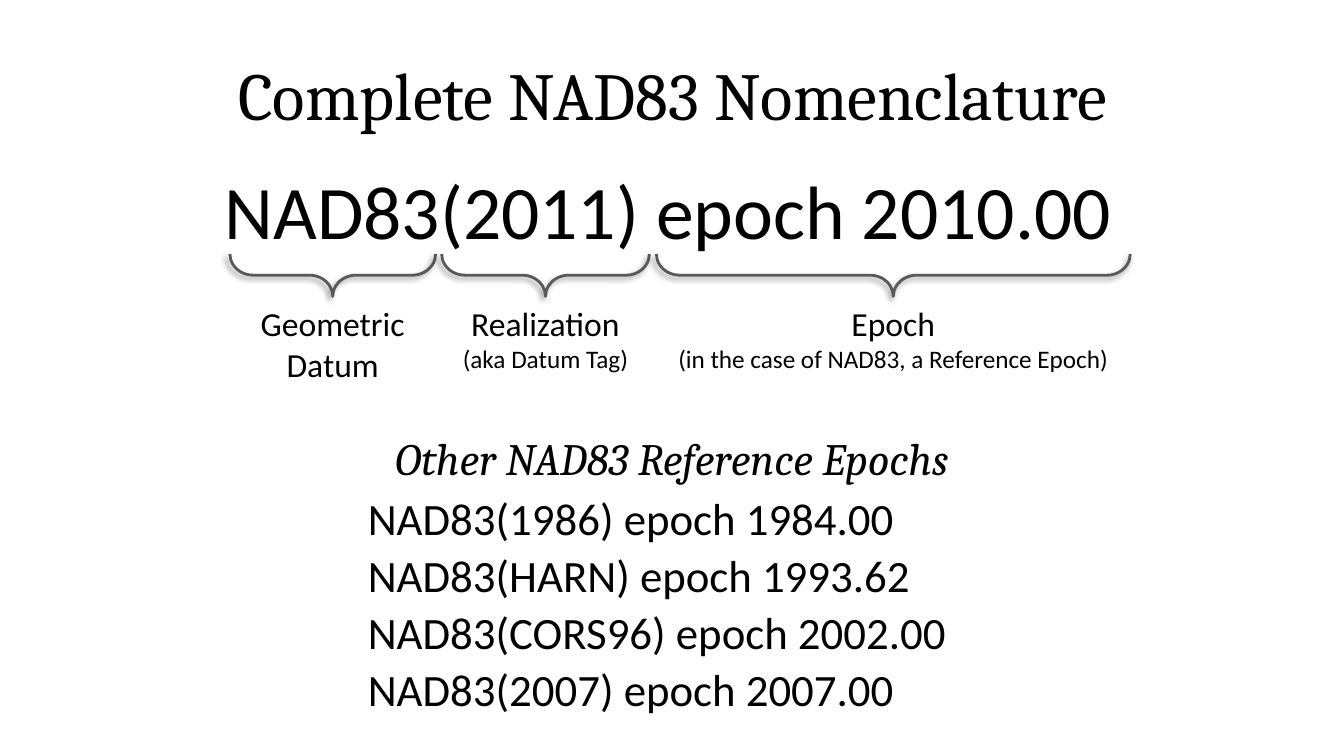
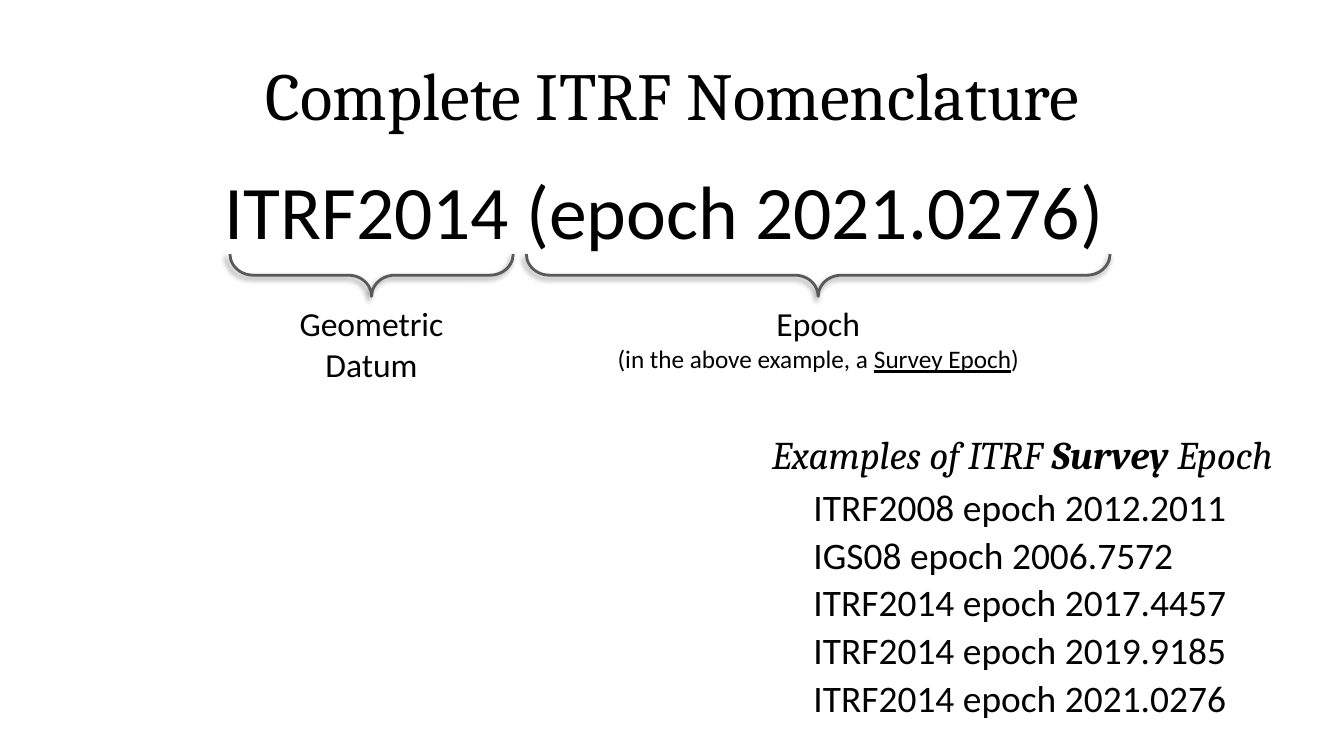
from lxml import etree
from pptx import Presentation
from pptx.dml.color import RGBColor
from pptx.enum.shapes import MSO_SHAPE
from pptx.enum.text import MSO_ANCHOR, PP_ALIGN
from pptx.oxml.ns import qn
from pptx.util import Inches, Pt

BLACK = RGBColor(0x00, 0x00, 0x00)
GRAY = RGBColor(0x59, 0x59, 0x59)
BODY_FONT = "Calibri"
HEADING_FONT = "Cambria"
LEFT = PP_ALIGN.LEFT
CENTER = PP_ALIGN.CENTER
TOP = MSO_ANCHOR.TOP
MIDDLE = MSO_ANCHOR.MIDDLE
RIGHT_BRACE = MSO_SHAPE.RIGHT_BRACE
BRACE_TOP = 2.52
BRACE_DEPTH = 0.42
LABEL_TOP = 2.96


class NomenclatureDeck:
    """Holds the shared style and the slide being built."""

    def __init__(self):
        self.presentation = Presentation()
        self.presentation.slide_width = Inches(13.33)
        self.presentation.slide_height = Inches(7.5)
        self.slide = None

    def add_slide(self, title, example):
        self.slide = self.presentation.slides.add_slide(self.presentation.slide_layouts[6])
        self.text((0.67, 0.3, 12, 1.25), [title], [48], HEADING_FONT, CENTER, MIDDLE)
        self.text((2.13, 1.58, 10, 1.01), [example], [54])

    def text(self, box, lines, sizes, font=BODY_FONT, align=LEFT, anchor=TOP, after=0):
        frame = self.slide.shapes.add_textbox(*map(Inches, box)).text_frame
        frame.word_wrap = True
        frame.vertical_anchor = anchor
        paragraphs = []
        for index, (line, size) in enumerate(zip(lines, sizes)):
            paragraph = frame.add_paragraph() if index else frame.paragraphs[0]
            for part in [line] if isinstance(line, str) else line:
                paragraph.add_run().text = part
            paragraph.alignment = align
            paragraph.space_after = Pt(after)
            paragraph.font.name = font
            paragraph.font.size = Pt(size)
            paragraph.font.color.rgb = BLACK
            paragraphs.append(paragraph)
        return paragraphs

    def brace(self, left, width):
        middle_x = left + width / 2
        middle_y = BRACE_TOP + BRACE_DEPTH / 2
        shape = self.slide.shapes.add_shape(
            RIGHT_BRACE,
            Inches(middle_x - BRACE_DEPTH / 2), Inches(middle_y - width / 2),
            Inches(BRACE_DEPTH), Inches(width))
        shape.rotation = 90
        shape.adjustments[0] = 0.55
        shape.fill.background()
        shape.line.color.rgb = GRAY
        shape.line.width = Pt(2)
        shape.shadow.inherit = False
        effects = shape._element.spPr.find(qn("a:effectLst"))
        shadow = etree.SubElement(
            effects, qn("a:outerShdw"), blurRad=str(Pt(4)), dist=str(Pt(3)),
            dir="8100000", algn="tr", rotWithShape="0")
        color = etree.SubElement(shadow, qn("a:srgbClr"), val=str(BLACK))
        etree.SubElement(color, qn("a:alpha"), val="40000")

    def labelled_brace(self, left, width, lines, note_size=18):
        self.brace(left, width)
        return self.text((left, LABEL_TOP, width, 0.9), lines, [24, note_size], align=CENTER)

    def heading(self, left, width, line, size):
        paragraph = self.text((left, 4.22, width, 0.6), [line], [size], HEADING_FONT, CENTER)[0]
        paragraph.font.italic = True
        return paragraph

    def epoch_list(self, box, lines, size):
        self.text(box, lines, [size] * len(lines), after=2.2)


def build_nad83(deck):
    deck.add_slide("Complete NAD83 Nomenclature", "NAD83(2011) epoch 2010.00")
    deck.labelled_brace(2.28, 2.04, ["Geometric", "Datum"], 24)
    deck.labelled_brace(4.38, 2.06, ["Realization", "(aka Datum Tag)"])
    deck.labelled_brace(6.51, 4.7, ["Epoch", "(in the case of NAD83, a Reference Epoch)"])
    deck.heading(3.55, 6.23, "Other NAD83 Reference Epochs", 32)
    deck.epoch_list((3.55, 4.82, 6.23, 2.34), [
        "NAD83(1986) epoch 1984.00",
        "NAD83(HARN) epoch 1993.62",
        "NAD83(CORS96) epoch 2002.00",
        "NAD83(2007) epoch 2007.00",
    ], 32)


def build_itrf(deck):
    deck.add_slide("Complete ITRF Nomenclature", "ITRF2014 (epoch 2021.0276)")
    deck.labelled_brace(2.28, 2.81, ["Geometric", "Datum"], 24)
    note = deck.labelled_brace(5.22, 5.79, [
        "Epoch", ["(in the above example, a ", "Survey Epoch", ")"]])[1]
    note.runs[1].font.underline = True
    heading = deck.heading(7.38, 5.52, ["Examples of ITRF ", "Survey", " Epoch"], 28)
    heading.runs[1].font.bold = True
    deck.epoch_list((7.97, 4.75, 4.93, 2.46), [
        "ITRF2008 epoch 2012.2011",
        "IGS08 epoch 2006.7572",
        "ITRF2014 epoch 2017.4457",
        "ITRF2014 epoch 2019.9185",
        "ITRF2014 epoch 2021.0276",
    ], 26.7)


def main():
    deck = NomenclatureDeck()
    build_nad83(deck)
    build_itrf(deck)
    deck.presentation.save("out.pptx")


if __name__ == "__main__":
    main()
